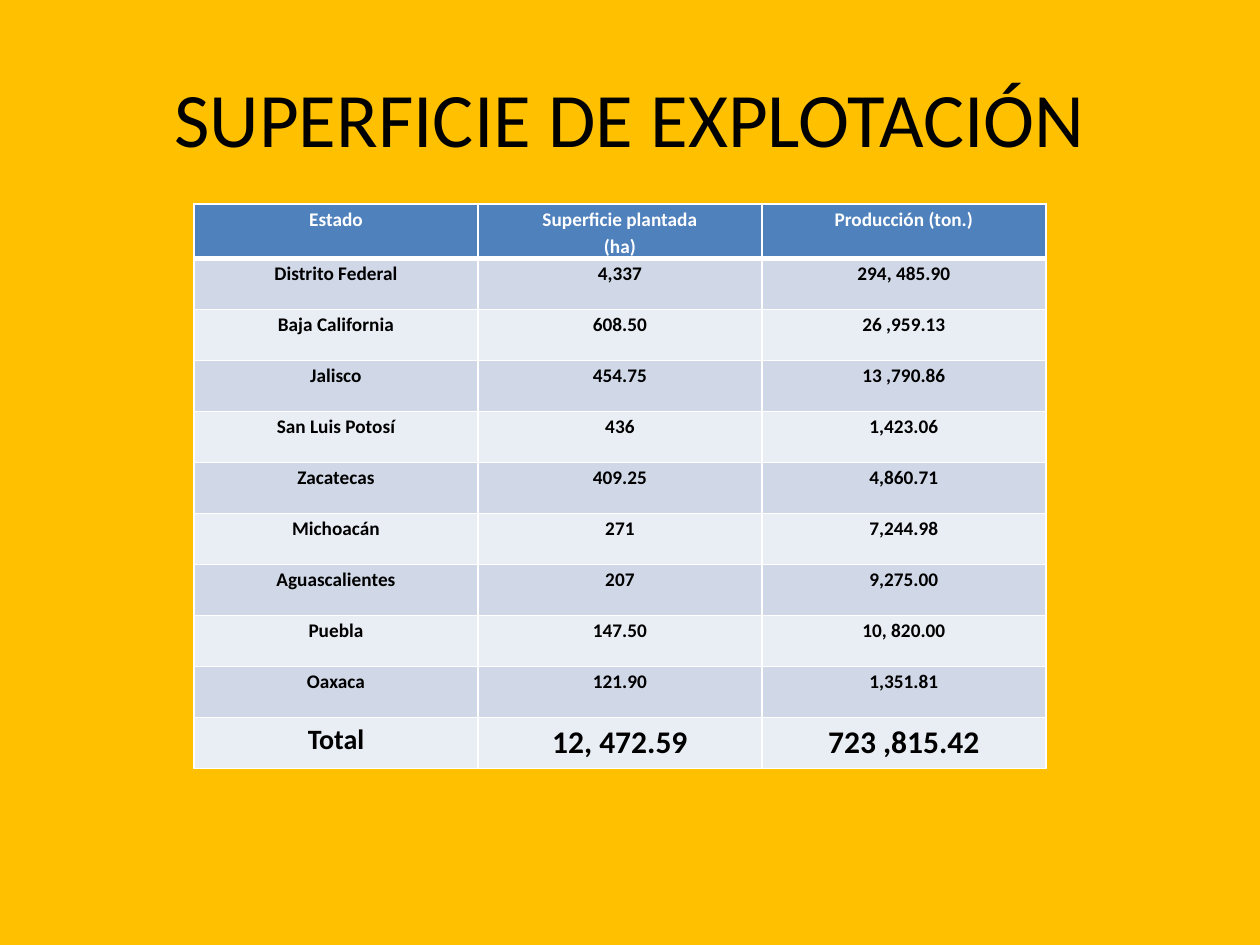
from lxml.etree import SubElement
from pptx import Presentation
from pptx.dml.color import RGBColor
from pptx.enum.text import MSO_ANCHOR as Anchor, PP_ALIGN as Align
from pptx.oxml.ns import qn
from pptx.util import Pt

EMU_PER_PX = 914400 // 126
FONT = "Calibri"
COLORS = {
    "background": "FFC000",
    "text": "000000",
    "header": "4F81BD",
    "header_text": "FFFFFF",
    "odd_row": "D0D8E8",
    "even_row": "E9EDF4",
    "border": "FFFFFF",
}
ROWS = [
    ("Estado", "Superficie plantada\n(ha)", "Producción (ton.)"),
    ("Distrito Federal", "4,337", "294, 485.90"),
    ("Baja California", "608.50", "26 ,959.13"),
    ("Jalisco", "454.75", "13 ,790.86"),
    ("San Luis Potosí", "436", "1,423.06"),
    ("Zacatecas", "409.25", "4,860.71"),
    ("Michoacán", "271", "7,244.98"),
    ("Aguascalientes", "207", "9,275.00"),
    ("Puebla", "147.50", "10, 820.00"),
    ("Oaxaca", "121.90", "1,351.81"),
    ("Total", "12, 472.59", "723 ,815.42"),
]
COLUMN_WIDTH, ROW_HEIGHT = 284, 51
BODY_SIZE = 11
TOTAL_SIZES = (16, 18, 18)


def px(length):
    return length * EMU_PER_PX


def rgb(name):
    return RGBColor.from_string(COLORS[name])


def add_run(para, text, size, color, bold=False):
    run = para.add_run()
    run.text = text
    font = run.font
    font.name, font.size, font.bold = FONT, Pt(size), bold
    font.color.rgb = rgb(color)


def add_title(slide, text):
    title = slide.shapes.title
    title.left, title.top, title.width, title.height = map(px, (63, 38, 1134, 157))
    frame = title.text_frame
    frame.vertical_anchor = Anchor.MIDDLE
    para = frame.paragraphs[0]
    para.alignment = Align.CENTER
    add_run(para, text, 44, "text")


def set_borders(cell, top=1, bottom=1):
    """Draw the four cell borders; call before filling, as the XML order matters."""
    properties = cell._tc.get_or_add_tcPr()
    for side, width in (("L", 1), ("R", 1), ("T", top), ("B", bottom)):
        line = SubElement(properties, qn(f"a:ln{side}"), w=str(Pt(width)))
        fill = SubElement(line, qn("a:solidFill"))
        SubElement(fill, qn("a:srgbClr"), val=COLORS["border"])


def fill_cell(cell, text, size, color, fill):
    cell.margin_left = cell.margin_right = px(9)
    cell.margin_top = cell.margin_bottom = 0
    cell.vertical_anchor = Anchor.TOP
    cell.fill.solid()
    cell.fill.fore_color.rgb = rgb(fill)
    frame = cell.text_frame
    for index, line in enumerate(text.split("\n")):
        para = frame.add_paragraph() if index else frame.paragraphs[0]
        para.alignment = Align.CENTER
        para.line_spacing = 1.15
        add_run(para, line, size, color, bold=True)


def add_state_table(slide):
    row_count, column_count = len(ROWS), len(ROWS[0])
    table = slide.shapes.add_table(
        row_count, column_count, px(194), px(204),
        px(COLUMN_WIDTH * column_count), px(ROW_HEIGHT * row_count)).table
    for column in table.columns:
        column.width = px(COLUMN_WIDTH)
    for r, values in enumerate(ROWS):
        table.rows[r].height = px(ROW_HEIGHT)
        is_header, is_total = r == 0, r == row_count - 1
        fill = "header" if is_header else "odd_row" if r % 2 else "even_row"
        color = "header_text" if is_header else "text"
        for c, text in enumerate(values):
            cell = table.cell(r, c)
            set_borders(cell, top=3 if r == 1 else 1, bottom=3 if is_header else 1)
            size = TOTAL_SIZES[c] if is_total else BODY_SIZE
            fill_cell(cell, text, size, color, fill)


def main():
    deck = Presentation()
    deck.slide_width, deck.slide_height = px(1260), px(945)
    slide = deck.slides.add_slide(deck.slide_layouts[5])
    slide.background.fill.solid()
    slide.background.fill.fore_color.rgb = rgb("background")
    add_title(slide, "SUPERFICIE DE EXPLOTACIÓN")
    add_state_table(slide)
    deck.save("out.pptx")


if __name__ == "__main__":
    main()
